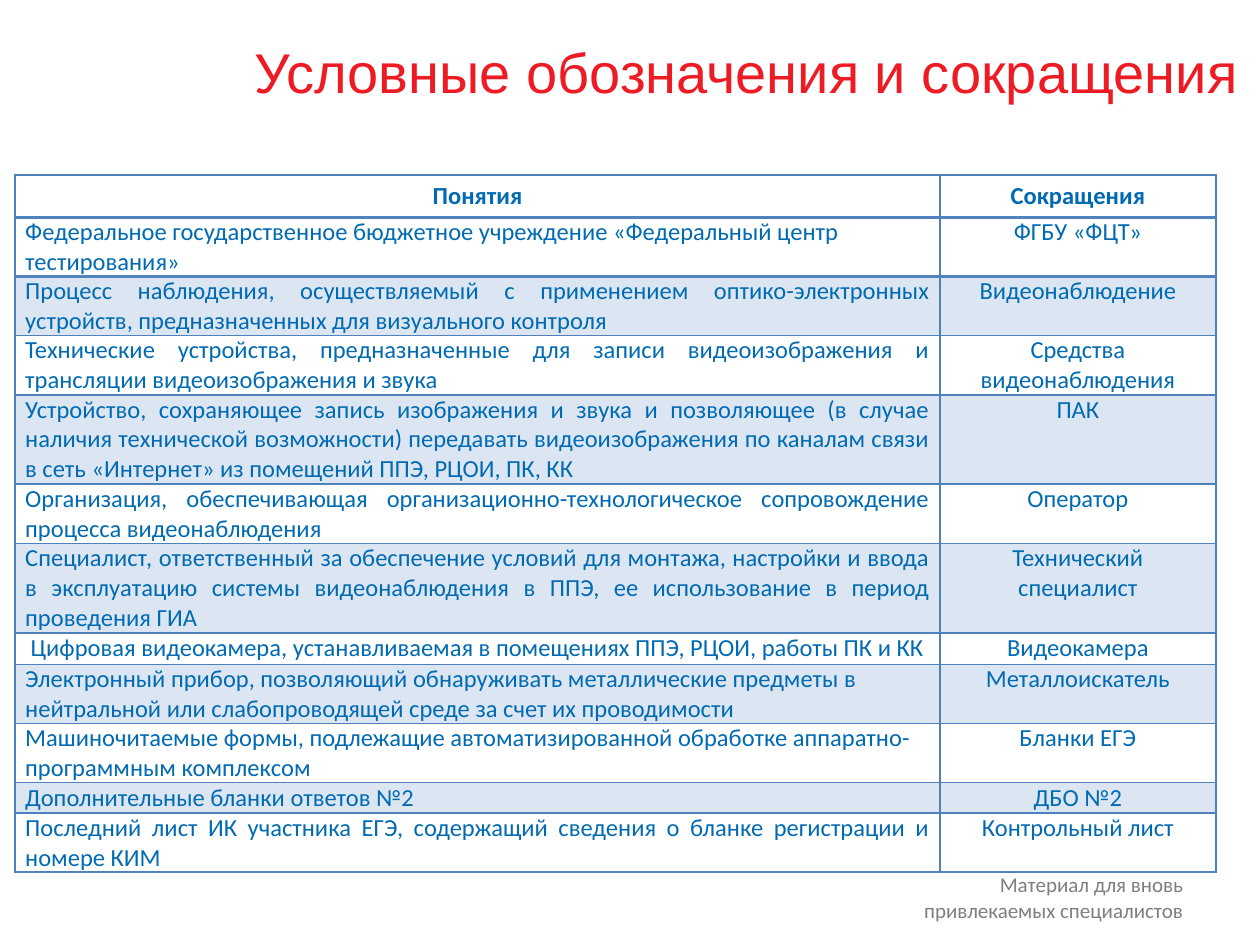
from lxml import etree
from pptx import Presentation, util as u
from pptx.dml.color import RGBColor
from pptx.enum import text
from pptx.oxml.ns import qn

A = text.PP_ALIGN
LINE, BAND, BLUE = "4F81BD", "DCE6F2", "006AB3"


def style(par, align, face, size, hue, bold=False):
    par.alignment = align
    par.font.color.rgb = RGBColor.from_string(hue)
    look = {"name": face, "size": u.Pt(size), "bold": bold}
    for key, val in look.items():
        setattr(par.font, key, val)


def edge(cell, side, width):
    props = cell._tc.get_or_add_tcPr()
    line = etree.SubElement(props, qn("a:ln" + side), w=str(u.Pt(width)))
    fill = etree.SubElement(line, qn("a:solidFill"))
    etree.SubElement(fill, qn("a:srgbClr"), val=LINE)


deck = Presentation()
deck.slide_width, deck.slide_height = u.Inches(10), u.Inches(7.5)
slide = deck.slides.add_slide(deck.slide_layouts[5])

# Title
title = slide.shapes.title
place = {"left": 1.89, "top": -0.02, "width": 8.07, "height": 1.17}
for key, val in place.items():
    setattr(title, key, u.Inches(val))
title.text_frame.text = "Условные обозначения и сокращения"
title.text_frame.vertical_anchor = text.MSO_ANCHOR.MIDDLE
style(title.text_frame.paragraphs[0], A.CENTER, "Arial", 32, "ED1C24")

# Footer note
note = slide.shapes.add_textbox(u.Inches(6.97), u.Inches(6.87),
                                u.Inches(2.52), u.Inches(0.51)).text_frame
note.word_wrap = True
note.text = "Материал для вновь привлекаемых специалистов"
style(note.paragraphs[0], A.RIGHT, "Calibri", 12, "7F7F7F")

# Table rows: height, alignment of the term, term, short form
rows = [
    (0.33, A.CENTER, "Понятия", "Сокращения"),
    (0.47, A.LEFT, "Федеральное государственное бюджетное учреждение "
     "«Федеральный центр тестирования»", "ФГБУ «ФЦТ»"),
    (0.47, A.JUSTIFY, "Процесс наблюдения, осуществляемый с применением "
     "оптико-электронных устройств, предназначенных для визуального контроля",
     "Видеонаблюдение"),
    (0.47, A.JUSTIFY, "Технические устройства, предназначенные для записи "
     "видеоизображения и трансляции видеоизображения и звука",
     "Средства видеонаблюдения"),
    (0.71, A.JUSTIFY, "Устройство, сохраняющее запись изображения и звука и "
     "позволяющее (в случае наличия технической возможности) передавать "
     "видеоизображения по каналам связи в сеть «Интернет» из помещений "
     "ППЭ, РЦОИ, ПК, КК", "ПАК"),
    (0.47, A.JUSTIFY, "Организация, обеспечивающая "
     "организационно-технологическое сопровождение процесса видеонаблюдения",
     "Оператор"),
    (0.71, A.JUSTIFY, "Специалист, ответственный за обеспечение условий для "
     "монтажа, настройки и ввода в эксплуатацию системы видеонаблюдения в "
     "ППЭ, ее использование в период проведения ГИА",
     "Технический специалист"),
    (0.25, A.CENTER, "Цифровая видеокамера, устанавливаемая в помещениях "
     "ППЭ, РЦОИ, работы ПК и КК", "Видеокамера"),
    (0.47, A.LEFT, "Электронный прибор, позволяющий обнаруживать "
     "металлические предметы в нейтральной или слабопроводящей среде за счет "
     "их проводимости", "Металлоискатель"),
    (0.47, A.LEFT, "Машиночитаемые формы, подлежащие автоматизированной "
     "обработке аппаратно-программным комплексом", "Бланки ЕГЭ"),
    (0.24, A.LEFT, "Дополнительные бланки ответов №2", "ДБО №2"),
    (0.47, A.JUSTIFY, "Последний лист ИК участника ЕГЭ, содержащий сведения "
     "о бланке регистрации и номере КИМ", "Контрольный лист"),
]
table = slide.shapes.add_table(len(rows), 2, u.Inches(0.12), u.Inches(1.39),
                               u.Inches(9.53), u.Inches(5.5)).table
table.first_row = table.horz_banding = False
for col, width in zip(table.columns, (7.34, 2.19)):
    col.width = u.Inches(width)

for i, (height, align, term, short) in enumerate(rows):
    table.rows[i].height = u.Inches(height)
    head = i == 0
    side, rim = (0.1, 0.05) if head else (0.08, 0)
    for j, (words, flow) in enumerate([(term, align), (short, A.CENTER)]):
        cell = table.cell(i, j)
        cell.text = words
        par = cell.text_frame.paragraphs[0]
        style(par, flow, "Calibri", 14, BLUE, head)
        par.space_after = u.Pt(1 if head else 10)
        cell.margin_left = cell.margin_right = u.Inches(side)
        cell.margin_top = cell.margin_bottom = u.Inches(rim)
        cell.vertical_anchor = (text.MSO_ANCHOR.MIDDLE if head
                                else text.MSO_ANCHOR.TOP)
        # Thick rules lie above and below the first entry
        edge(cell, "L", 1)
        edge(cell, "R", 1)
        edge(cell, "T", 2 if i in (1, 2) else 1)
        edge(cell, "B", 2 if i in (0, 1) else 1)
        if i and i % 2 == 0:
            cell.fill.solid()
            cell.fill.fore_color.rgb = RGBColor.from_string(BAND)
        else:
            cell.fill.background()

deck.save("out.pptx")
